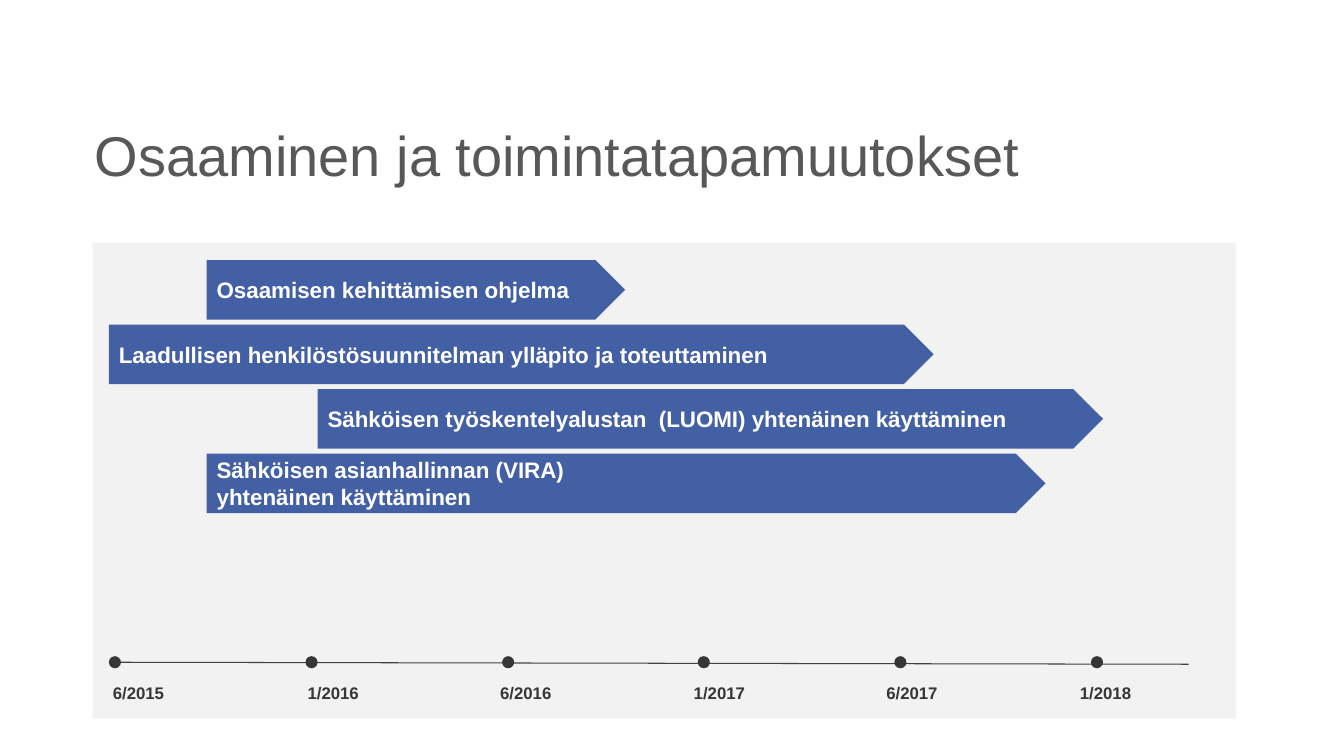
from lxml.etree import SubElement
from pptx import Presentation
from pptx.dml.color import RGBColor
from pptx.enum.shapes import MSO_CONNECTOR, MSO_SHAPE
from pptx.enum.text import MSO_ANCHOR, PP_ALIGN
from pptx.oxml.ns import qn
from pptx.util import Emu, Pt

EMU_PER_PX = 9144
DARK = "363636"

DATES = ["6/2015", "1/2016", "6/2016", "1/2017", "6/2017", "1/2018"]
PROGRAMMES = [
    (205, 415, ["Osaamisen kehittämisen ohjelma"]),
    (108, 818, ["Laadullisen henkilöstösuunnitelman ylläpito ja toteuttaminen"]),
    (315, 779, ["Sähköisen työskentelyalustan  (LUOMI) yhtenäinen käyttäminen"]),
    (205, 832, ["Sähköisen asianhallinnan (VIRA)", "yhtenäinen käyttäminen"]),
]


def px(*lengths):
    return [Emu(length * EMU_PER_PX) for length in lengths]


def color(hex_code):
    return RGBColor.from_string(hex_code)


def write_lines(frame, lines, size, hex_code, bold=True, align=PP_ALIGN.LEFT):
    frame.word_wrap = True
    for number, line in enumerate(lines):
        paragraph = frame.add_paragraph() if number else frame.paragraphs[0]
        paragraph.text = line
        paragraph.alignment = align
        font = paragraph.font
        font.name, font.size, font.bold = "Arial", Pt(size), bold
        font.color.rgb = color(hex_code)


def add_filled(slide, preset, box, hex_code):
    shape = slide.shapes.add_shape(preset, *px(*box))
    shape.shadow.inherit = False
    shape.fill.solid()
    shape.fill.fore_color.rgb = color(hex_code)
    shape.line.fill.background()
    return shape


def add_title(slide, wording):
    title = slide.shapes.title
    title.left, title.top, title.width, title.height = px(84, 116, 1142, 70)
    frame = title.text_frame
    frame.vertical_anchor = MSO_ANCHOR.TOP
    frame.margin_left, frame.margin_top, frame.margin_bottom = px(10, 4, 0)
    write_lines(frame, [wording], 40, "58585A", bold=False)


def add_programme(slide, row, left, width, lines):
    arrow = add_filled(slide, MSO_SHAPE.PENTAGON, (left, 258 + 64 * row, width, 59), "4460A5")
    frame = arrow.text_frame
    frame.vertical_anchor = MSO_ANCHOR.MIDDLE
    frame.margin_left, = px(10)
    write_lines(frame, lines, 16, "FFFFFF")


def add_axis(slide):
    axis = slide.shapes.add_connector(MSO_CONNECTOR.STRAIGHT, *px(108, 657, 1179, 659))
    axis.line.color.rgb = color("424243")
    axis.line.width = Pt(0.75)
    SubElement(axis.element.spPr, qn("a:effectLst"))


def add_milestone(slide, number, date):
    add_filled(slide, MSO_SHAPE.OVAL, (round(108 + 194.8 * number), 651, 12, 12), DARK)
    if number == 0:
        left, width, align = 102, 102, PP_ALIGN.LEFT
    else:
        left, width, align = round(64.4 + 191.5 * number), 149, PP_ALIGN.CENTER
    label = slide.shapes.add_textbox(*px(left, 672, width, 30))
    write_lines(label.text_frame, [date], 12, DARK, align=align)


def main():
    presentation = Presentation()
    presentation.slide_width, presentation.slide_height = px(1333, 750)
    slide = presentation.slides.add_slide(presentation.slide_layouts[5])
    add_title(slide, "Osaaminen ja toimintatapamuutokset")
    add_filled(slide, MSO_SHAPE.RECTANGLE, (92, 241, 1134, 472), "F2F2F2")
    for row, programme in enumerate(PROGRAMMES):
        add_programme(slide, row, *programme)
    add_axis(slide)
    for number, date in enumerate(DATES):
        add_milestone(slide, number, date)
    presentation.save("out.pptx")


if __name__ == "__main__":
    main()
